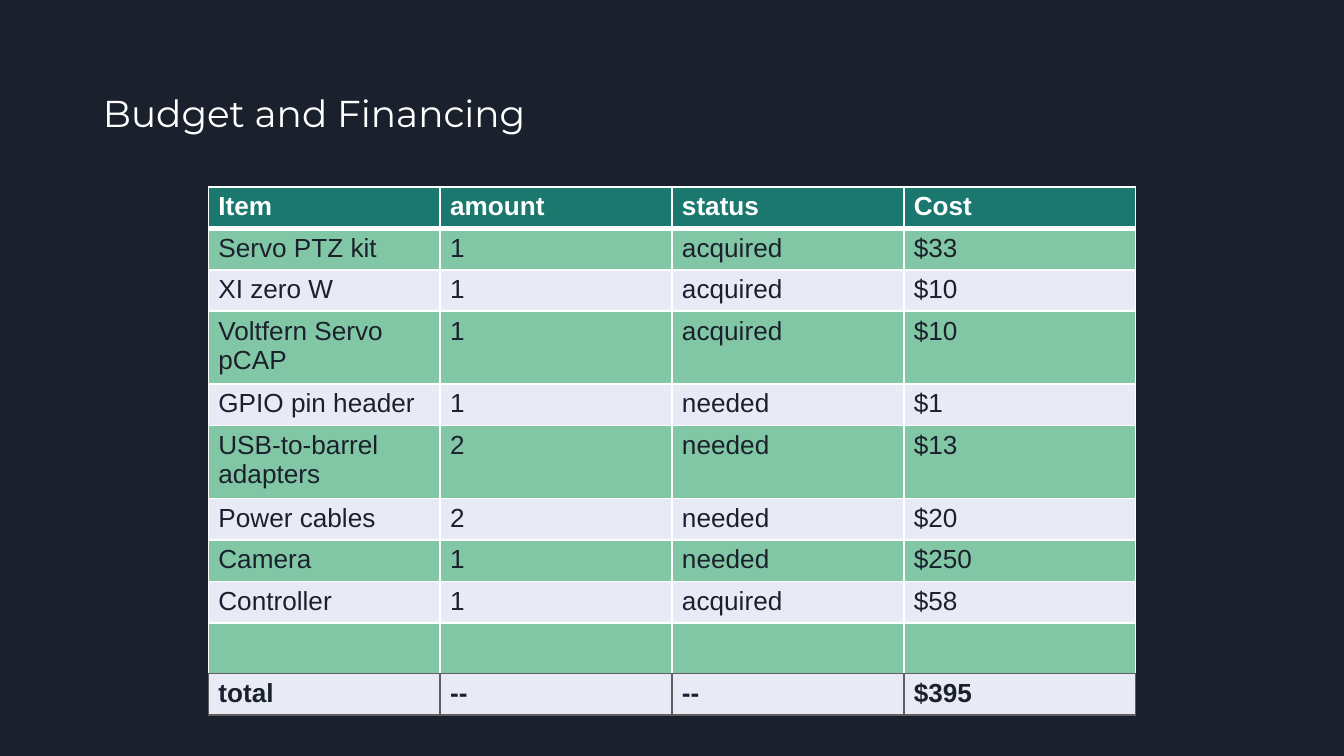
from lxml.etree import SubElement
from pptx import Presentation
from pptx.dml.color import RGBColor
from pptx.enum.text import MSO_ANCHOR
from pptx.oxml.ns import qn
from pptx.util import Inches, Pt

NAVY = RGBColor(0x1B, 0x21, 0x2C)
TEAL = RGBColor(0x1B, 0x78, 0x6E)
GREEN = RGBColor(0x82, 0xC7, 0xA5)
LAVENDER = RGBColor(0xE8, 0xEB, 0xF5)
GRAY = RGBColor(0x5E, 0x5E, 0x5E)
WHITE = RGBColor(0xFF, 0xFF, 0xFF)

BUDGET = [
    ("Item", "amount", "status", "Cost"),
    ("Servo PTZ kit", "1", "acquired", "$33"),
    ("XI zero W", "1", "acquired", "$10"),
    ("Voltfern Servo pCAP", "1", "acquired", "$10"),
    ("GPIO pin header", "1", "needed", "$1"),
    ("USB-to-barrel adapters", "2", "needed", "$13"),
    ("Power cables", "2", "needed", "$20"),
    ("Camera", "1", "needed", "$250"),
    ("Controller", "1", "acquired", "$58"),
    ("", "", "", ""),
    ("total", "--", "--", "$395"),
]
TOTAL_ROW = len(BUDGET) - 1
ROW_HEIGHTS = [0.3, 0.3, 0.3, 0.52, 0.3, 0.52, 0.3, 0.3, 0.3, 0.36, 0.3]


def set_border(cell, side, color, points):
    properties = cell._tc.get_or_add_tcPr()
    line = SubElement(properties, qn(f"a:ln{side}"), w=str(Pt(points)))
    fill = SubElement(line, qn("a:solidFill"))
    SubElement(fill, qn("a:srgbClr"), val=str(color))


def set_margins(target, horizontal, vertical):
    target.margin_left = target.margin_right = horizontal
    target.margin_top = target.margin_bottom = vertical


presentation = Presentation()
presentation.slide_width = Inches(10)
presentation.slide_height = Inches(10 * 9 / 16)
slide = presentation.slides.add_slide(presentation.slide_layouts[6])
slide.background.fill.solid()
slide.background.fill.fore_color.rgb = NAVY

title = slide.shapes.add_textbox(Inches(0.69), Inches(0.31), Inches(8.62), Inches(1.09))
title_frame = title.text_frame
title_frame.word_wrap = True
title_frame.vertical_anchor = MSO_ANCHOR.MIDDLE
set_margins(title_frame, Pt(5.4), Pt(2.7))
paragraph = title_frame.paragraphs[0]
paragraph.text = "Budget and Financing"
paragraph.line_spacing = 0.9
paragraph.font.name = "Montserrat"
paragraph.font.size = Pt(20)
paragraph.font.color.rgb = WHITE

table = slide.shapes.add_table(
    len(BUDGET), len(BUDGET[0]),
    Inches(1.55), Inches(1.39), Inches(6.9), Inches(sum(ROW_HEIGHTS)),
).table

for row_index, values in enumerate(BUDGET):
    table.rows[row_index].height = Inches(ROW_HEIGHTS[row_index])
    is_header = row_index == 0
    is_total = row_index == TOTAL_ROW
    side_color = GRAY if is_total else WHITE
    bottom_color = GRAY if row_index >= TOTAL_ROW - 1 else WHITE
    for column_index, value in enumerate(values):
        cell = table.cell(row_index, column_index)
        set_margins(cell, Pt(5.4), Pt(2.7))
        set_border(cell, "L", side_color, 1)
        set_border(cell, "R", side_color, 1)
        set_border(cell, "T", side_color, 3 if row_index == 1 else 1)
        set_border(cell, "B", bottom_color, 3 if is_header else 1)
        cell.fill.solid()
        cell.fill.fore_color.rgb = TEAL if is_header else GREEN if row_index % 2 else LAVENDER
        if value:
            paragraph = cell.text_frame.paragraphs[0]
            paragraph.text = value
            paragraph.font.name = "Arial"
            paragraph.font.size = Pt(14)
            paragraph.font.bold = is_header or is_total
            paragraph.font.color.rgb = WHITE if is_header else NAVY

presentation.save("out.pptx")
